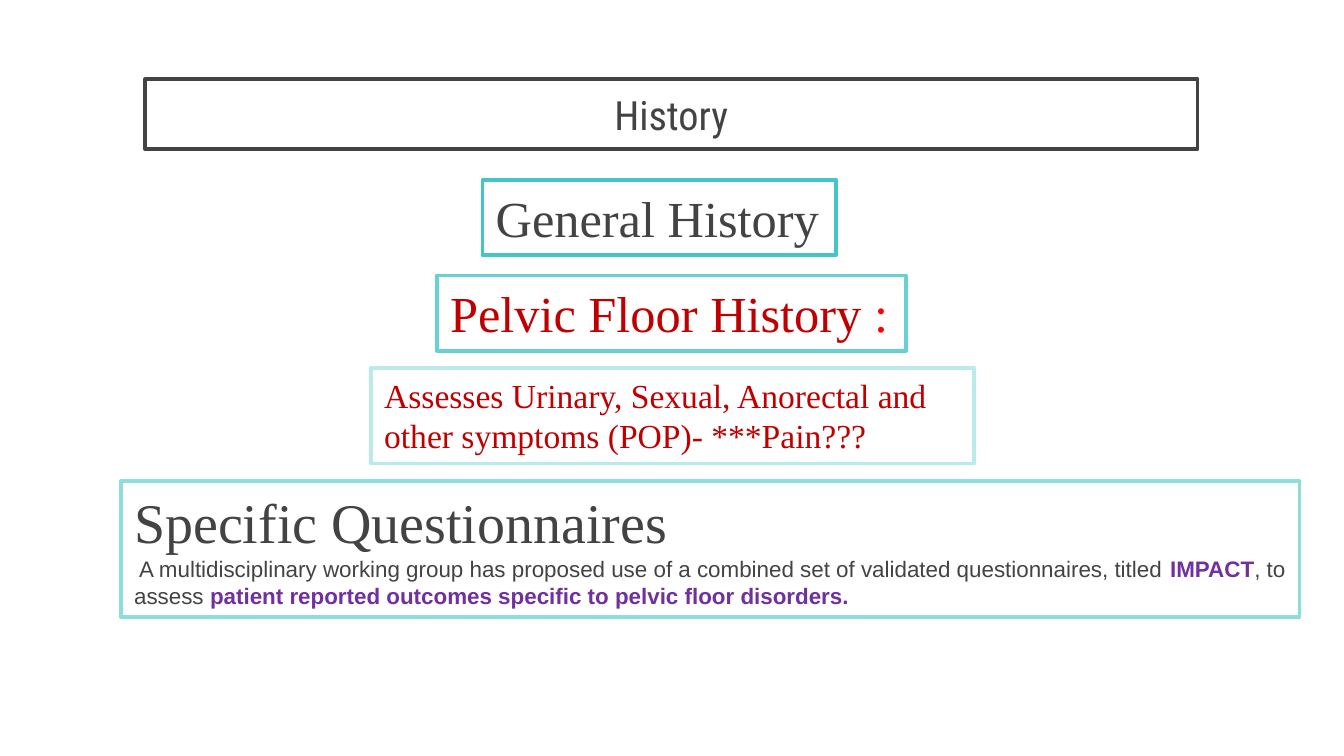
from pptx import Presentation
from pptx.dml.color import RGBColor
from pptx.enum.shapes import MSO_SHAPE as Shape
from pptx.enum.text import MSO_ANCHOR as Anchor, MSO_AUTO_SIZE as AutoSize, PP_ALIGN as Align
from pptx.util import Inches, Pt

COLORS = {
    "white": "FFFFFF", "gray": "434343", "dark_red": "C00000", "red": "FF0000",
    "purple": "7030A0", "teal": "44C5C8", "mid_teal": "67D1D3",
    "light_teal": "8DDCDE", "pale_teal": "BAEAEA",
}
SERIF = "Times New Roman"


def color(name):
    return RGBColor.from_string(COLORS[name])


def add_span(para, text, font, size, ink, bold=False):
    span = para.add_run()
    span.text = text
    span.font.name = font
    span.font.size = Pt(size)
    span.font.bold = bold
    span.font.color.rgb = color(ink)


# Widescreen page, 16:9
deck = Presentation()
deck.slide_width = Inches(10)
deck.slide_height = Inches(10 * 9 / 16)
page = deck.slides.add_slide(deck.slide_layouts[5])

# Title in its frame
title = page.shapes.title
title.left, title.top = Inches(1.08), Inches(0.59)
title.width, title.height = Inches(7.83), Inches(0.52)
title.line.color.rgb = color("gray")
title.line.width = Pt(2)
frame = title.text_frame
frame.auto_size = AutoSize.NONE
frame.vertical_anchor = Anchor.MIDDLE
frame.margin_left = frame.margin_right = Inches(0.1)
frame.margin_top = frame.margin_bottom = Inches(0.1)
frame.paragraphs[0].alignment = Align.CENTER
add_span(frame.paragraphs[0], "History", "Roboto Condensed", 21.6, "gray")

# Boxes: left, top, width, height, border, wrap, paragraphs of (text, font, size, ink, bold)
boxes = [
    (3.59, 1.34, 2.63, 0.56, "teal", False,
     [[("General History", SERIF, 27, "gray")]]),
    (3.25, 2.05, 3.49, 0.56, "mid_teal", False,
     [[("Pelvic Floor History ", SERIF, 27, "dark_red"), (":", SERIF, 27, "red")]]),
    (2.76, 2.74, 4.49, 0.71, "pale_teal", True,
     [[("Assesses Urinary, Sexual, Anorectal and other symptoms (POP)- ***Pain???",
        SERIF, 18, "dark_red")]]),
    (0.9, 3.58, 8.77, 1.01, "light_teal", True,
     [[("Specific Questionnaires", SERIF, 30, "gray")],
      [(" A multidisciplinary working group has proposed use of a combined set of "
        "validated questionnaires, titled ", "Arial", 12, "gray"),
       ("IMPACT", "Arial", 12, "purple", True),
       (", to assess ", "Arial", 12, "gray"),
       ("patient reported outcomes specific to pelvic floor disorders.",
        "Arial", 12, "purple", True)]]),
]
for left, top, width, height, border, wrap, paragraphs in boxes:
    box = page.shapes.add_shape(
        Shape.RECTANGLE, Inches(left), Inches(top), Inches(width), Inches(height))
    box.shadow.inherit = False
    box.fill.solid()
    box.fill.fore_color.rgb = color("white")
    box.line.color.rgb = color(border)
    box.line.width = Pt(2)
    frame = box.text_frame
    frame.word_wrap = wrap
    frame.auto_size = AutoSize.SHAPE_TO_FIT_TEXT
    frame.vertical_anchor = Anchor.TOP
    for index, spans in enumerate(paragraphs):
        para = frame.add_paragraph() if index else frame.paragraphs[0]
        para.alignment = Align.LEFT
        for span in spans:
            add_span(para, *span)

deck.save("out.pptx")
